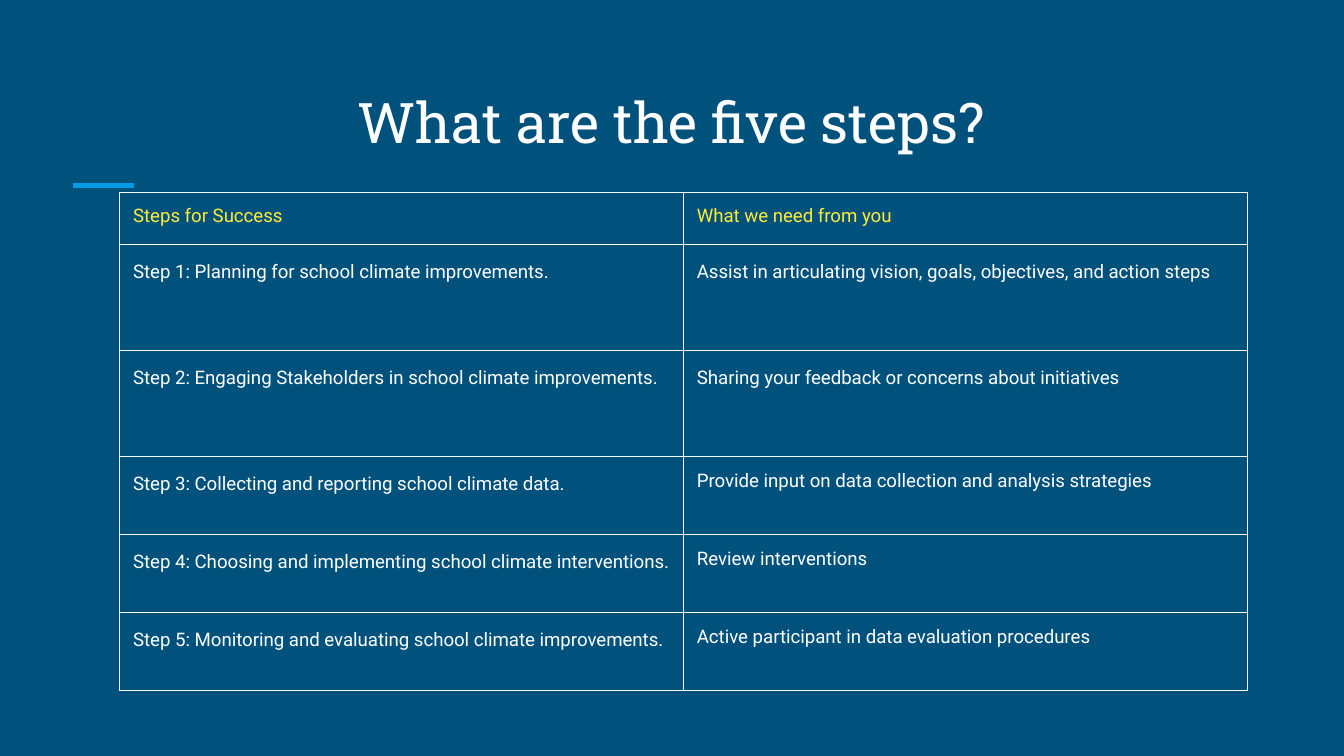
from lxml.etree import SubElement
from pptx import Presentation
from pptx.dml.color import RGBColor
from pptx.enum.shapes import MSO_CONNECTOR
from pptx.enum.text import MSO_ANCHOR, PP_ALIGN
from pptx.oxml.ns import qn
from pptx.util import Inches, Pt

NAVY, BLUE, WHITE = "00517C", "039BE5", "FFFFFF"
YELLOW, PALE = "FFEB38", "FAFAFA"
PAD = 0.1

HEADS = ("Steps for Success", "What we need from you")
# Each step: row height, step text, what is needed, whether the need is spaced
STEPS = [
    (0.79, "Step 1: Planning for school climate improvements.",
     "Assist in articulating vision, goals, objectives, and action steps", True),
    (0.79, "Step 2: Engaging Stakeholders in school climate improvements.",
     "Sharing your feedback or concerns about initiatives", True),
    (0.58, "Step 3: Collecting and reporting school climate data.",
     "Provide input on data collection and analysis strategies", False),
    (0.58, "Step 4: Choosing and implementing school climate interventions.",
     "Review interventions", False),
    (0.58, "Step 5: Monitoring and evaluating school climate improvements.",
     "Active participant in data evaluation procedures", False),
]


def color(code):
    return RGBColor.from_string(code)


def style(para, name, size, code):
    para.font.name = name
    para.font.size = Pt(size)
    para.font.color.rgb = color(code)


def pad(item):
    item.margin_left = item.margin_right = Inches(PAD)
    item.margin_top = item.margin_bottom = Inches(PAD)


def add_title(slide, left, top, width, height):
    title = slide.shapes.title
    title.left, title.top = Inches(left), Inches(top)
    title.width, title.height = Inches(width), Inches(height)
    frame = title.text_frame
    frame.text = "What are the five steps?"
    frame.vertical_anchor = MSO_ANCHOR.BOTTOM
    pad(frame)
    para = frame.paragraphs[0]
    para.alignment = PP_ALIGN.CENTER
    style(para, "Roboto Slab", 30, WHITE)


def add_accent(slide, left, top, width):
    line = slide.shapes.add_connector(
        MSO_CONNECTOR.STRAIGHT, Inches(left), Inches(top),
        Inches(left + width), Inches(top))
    line.line.color.rgb = color(BLUE)
    line.line.width = Pt(3)
    SubElement(line._element.spPr, qn("a:effectLst"))


def add_borders(cell):
    props = cell._tc.get_or_add_tcPr()
    for spot, side in enumerate(("lnL", "lnR", "lnT", "lnB")):
        edge = props.makeelement(qn(f"a:{side}"), {"w": str(Pt(0.75))})
        fill = SubElement(edge, qn("a:solidFill"))
        SubElement(fill, qn("a:srgbClr"), val=PALE)
        props.insert(spot, edge)


def fill_cell(cell, text, code, spaced):
    cell.text = text
    cell.fill.background()
    pad(cell)
    para = cell.text_frame.paragraphs[0]
    style(para, "Roboto", 10, code)
    if spaced:
        para.line_spacing = 1.15
        para.space_after = Pt(16)
    add_borders(cell)


def add_steps(slide, left, top, width, height):
    table = slide.shapes.add_table(
        len(STEPS) + 1, 2, Inches(left), Inches(top),
        Inches(width), Inches(height)).table
    table.first_row = table.horz_banding = False

    # Header row takes the height that the steps leave
    table.rows[0].height = Inches(height - sum(step[0] for step in STEPS))
    for col, head in enumerate(HEADS):
        fill_cell(table.cell(0, col), head, YELLOW, False)

    # Step rows
    for row, (tall, step, need, spaced) in enumerate(STEPS, 1):
        table.rows[row].height = Inches(tall)
        fill_cell(table.cell(row, 0), step, WHITE, True)
        fill_cell(table.cell(row, 1), need, WHITE, spaced)


def main():
    deck = Presentation()
    # Widescreen, 16 to 9
    deck.slide_width = Inches(10)
    deck.slide_height = deck.slide_width * 9 // 16
    slide = deck.slides.add_slide(deck.slide_layouts[5])
    slide.background.fill.solid()
    slide.background.fill.fore_color.rgb = color(NAVY)
    add_accent(slide, 0.54, 1.38, 0.46)
    add_title(slide, 0.42, 0.5, 9.15, 0.75)
    add_steps(slide, 0.89, 1.43, 8.39, 3.71)
    deck.save("out.pptx")


if __name__ == "__main__":
    main()
